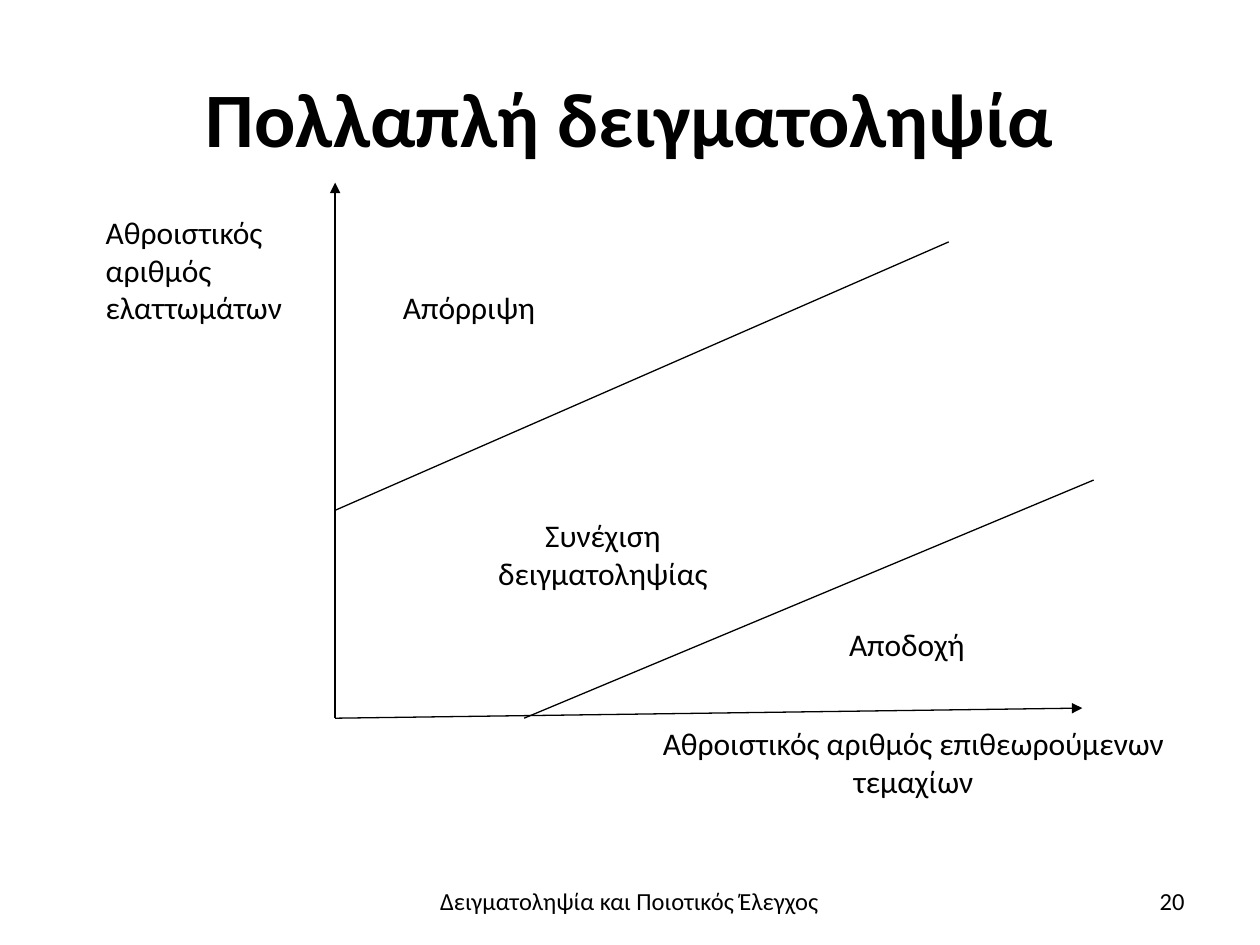
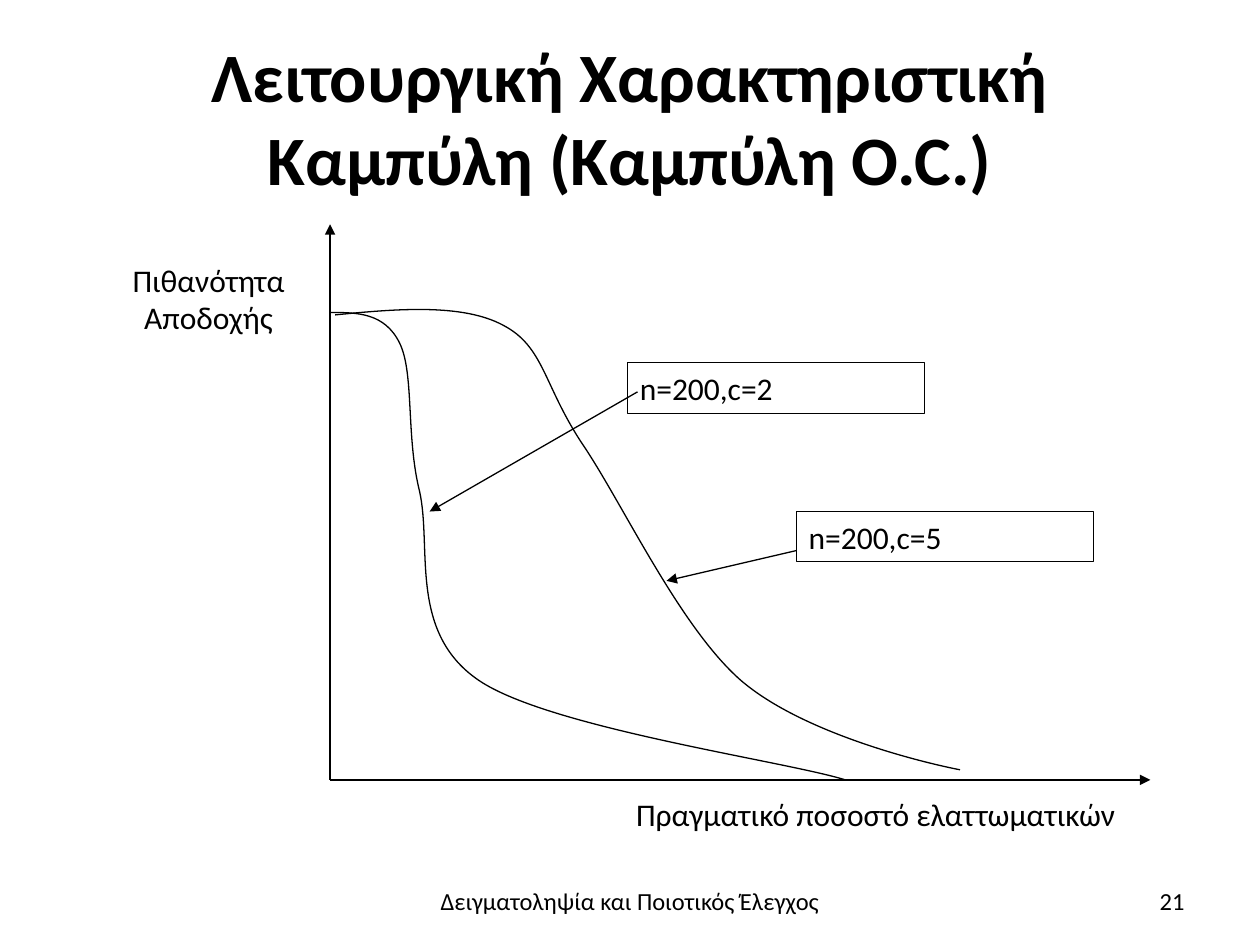
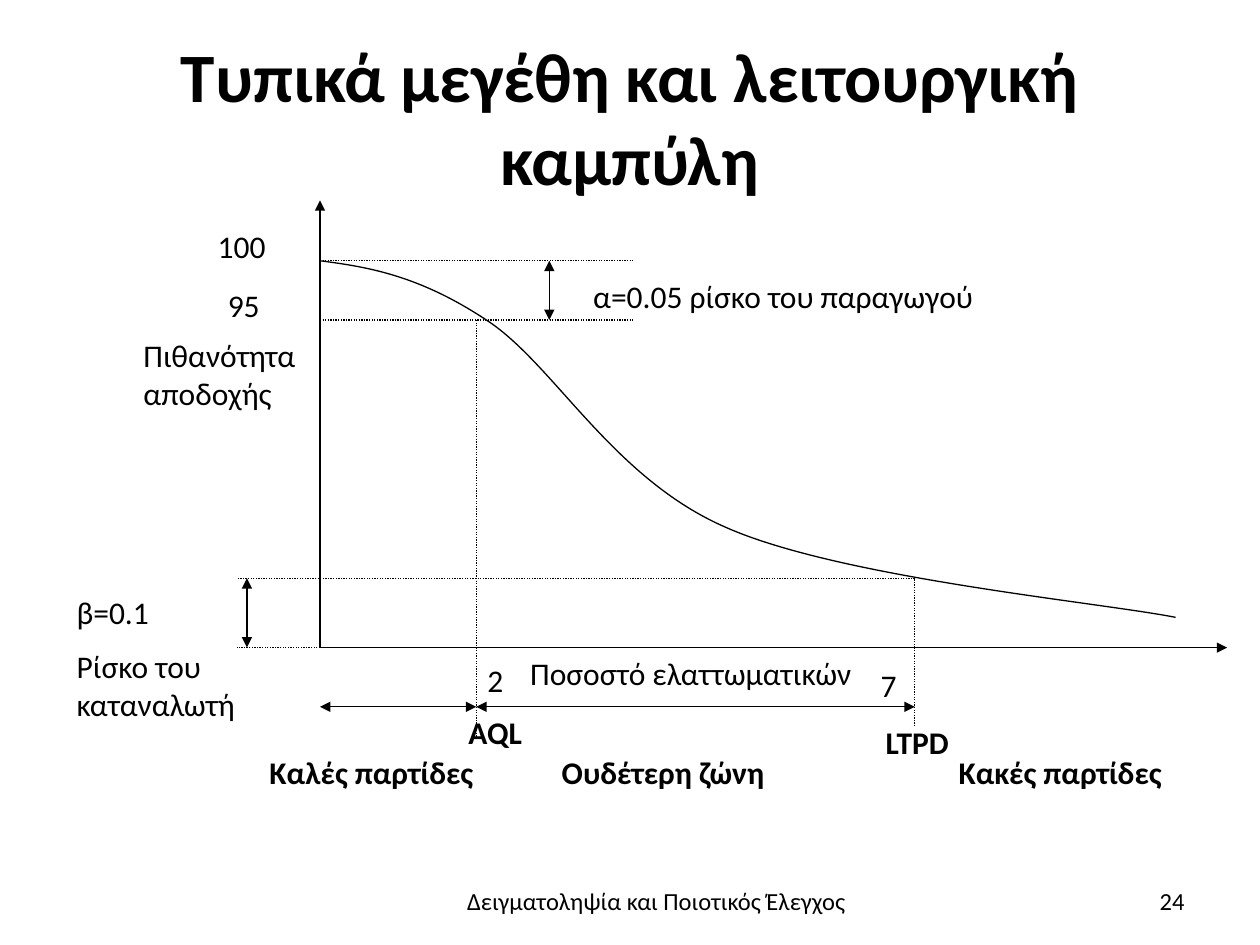
from lxml import etree
from pptx import Presentation
from pptx import util as u
from pptx.dml import color
from pptx.enum import dml, shapes, text
from pptx.oxml import ns

W, H = 10, 7.5
FONT, INK, PAPER = "Calibri", "000000", "FFFFFF"
LINE_W = 0.75
BODY, SMALL = 18, 14
LINE_H, PAD, PARA_GAP = 0.3, 0.1, 9
LEFT, CENTER, RIGHT = text.PP_ALIGN.LEFT, text.PP_ALIGN.CENTER, text.PP_ALIGN.RIGHT
FOOTER = "Δειγματοληψία και Ποιοτικός Έλεγχος"
FOOT_Y, FOOT_H = 6.95, 0.4
NUMBER_X, NUMBER_W = 7.17, 2.33

SAMPLING_ORIGIN = (2.66, 5.7)
OC_ORIGIN = (2.62, 6.19)
AXIS_X, AQL_X, LTPD_X, END_X = 2.54, 3.78, 7.26, 5.02
ALL_Y, HIGH_Y, LOW_Y, BASE_Y, ZONE_Y = 2.07, 2.54, 4.59, 5.14, 5.61
ALPHA_X, BETA_X, BETA_LEFT = 4.36, 1.96, 1.88
ZONE_LABEL_Y, ZONE_LABEL_W = 5.93, 1.99

SLIDES = [
    dict(
        title="Πολλαπλή δειγματοληψία", size=44, number="20", footer=(2.67, 4.65),
        border=PAPER,
        arrows=[(SAMPLING_ORIGIN, (2.66, 1.45)), (SAMPLING_ORIGIN, (8.59, 5.62))],
        plain=[((2.66, 4.05), (7.53, 1.92)), ((4.16, 5.7), (8.68, 3.81))],
        labels=[
            (["Αθροιστικός αριθμός ελαττωμάτων"], 0.74, 1.64, 1.82, 3, {}),
            (["Αθροιστικός αριθμός επιθεωρούμενων τεμαχίων"], 5.1, 5.7, 4.3, 2, dict(align=CENTER)),
            (["Απόρριψη"], 3.1, 2.24, 2.74, 1, {}),
            (["Αποδοχή"], 6.64, 4.91, 2.04, 1, {}),
            (["Συνέχιση δειγματοληψίας"], 3.37, 4.05, 2.83, 2, dict(align=CENTER)),
        ],
    ),
    dict(
        title="Λειτουργική Χαρακτηριστική Καμπύλη (Καμπύλη O.C.)", size=39.6,
        number="21", footer=(2.56, 4.88), border=PAPER,
        arrows=[(OC_ORIGIN, (2.62, 1.78)), (OC_ORIGIN, (9.13, 6.19)),
                ((5.06, 3.11), (3.41, 4.06)), ((6.32, 4.37), (5.29, 4.61))],
        curves=[
            [(2.62, 2.48), (2.83, 2.48), (3.05, 2.48), (3.17, 2.72), (3.29, 2.96),
             (3.22, 3.46), (3.33, 3.9), (3.43, 4.35), (3.24, 5.02), (3.8, 5.4),
             (4.36, 5.78), (6.23, 6.04), (6.71, 6.19)],
            [(2.66, 2.5), (3.16, 2.45), (3.67, 2.41), (3.99, 2.58), (4.32, 2.75),
             (4.31, 3.05), (4.62, 3.52), (4.94, 3.99), (5.39, 4.97), (5.88, 5.4),
             (6.38, 5.83), (7.36, 6.06), (7.62, 6.11)],
        ],
        labels=[
            (["n=200,c=2"], 4.98, 2.88, 2.36, 1, dict(border=INK)),
            (["n=200,c=5"], 6.32, 4.06, 2.36, 1, dict(border=INK)),
            (["Πραγματικό ποσοστό ελαττωματικών"], 4.95, 6.26, 4.17, 1, {}),
            (["Πιθανότητα Αποδοχής"], 0.85, 2.02, 1.61, 2, dict(align=CENTER)),
        ],
    ),
    dict(
        title="Τυπικά μεγέθη και λειτουργική καμπύλη", size=39.6,
        number="24", footer=(3.16, 4.1), border=None,
        arrows=[((AXIS_X, BASE_Y), (AXIS_X, 1.59)), ((AXIS_X, BASE_Y), (9.74, BASE_Y))],
        spans=[((ALPHA_X, ALL_Y), (ALPHA_X, HIGH_Y)), ((BETA_X, LOW_Y), (BETA_X, BASE_Y)),
               ((AXIS_X, ZONE_Y), (AQL_X, ZONE_Y)), ((AQL_X, ZONE_Y), (LTPD_X, ZONE_Y))],
        dotted=[((AXIS_X, ALL_Y), (END_X, ALL_Y)), ((AXIS_X, HIGH_Y), (END_X, HIGH_Y)),
                ((LTPD_X, LOW_Y), (BETA_LEFT, LOW_Y)), ((AXIS_X, BASE_Y), (BETA_LEFT, BASE_Y)),
                ((AQL_X, HIGH_Y), (AQL_X, BASE_Y)), ((AQL_X, BASE_Y), (AQL_X, 5.85)),
                ((LTPD_X, BASE_Y), (LTPD_X, LOW_Y)), ((LTPD_X, BASE_Y), (LTPD_X, 5.77))],
        curves=[[(AXIS_X, ALL_Y), (2.93, 2.12), (3.33, 2.19), (3.86, 2.54), (4.4, 2.89),
                 (4.86, 3.8), (5.77, 4.19), (6.68, 4.59), (8.72, 4.78), (9.33, 4.9)]],
        labels=[
            (["AQL"], 3.62, 5.61, 0.83, 1, dict(bold=True)),
            (["LTPD"], 6.93, 5.69, 0.99, 1, dict(bold=True)),
            (["2"], 3.77, 5.2, 0.33, 1, {}),
            (["Ποσοστό ελαττωματικών"], 4.11, 5.14, 3.15, 1, {}),
            (["100"], 1.63, 1.75, 0.74, 1, {}),
            (["95"], 1.71, 2.22, 0.5, 1, {}),
            (["α=0.05 ρίσκο του παραγωγού"], 4.61, 2.15, 3.97, 1, {}),
            (["β=0.1", "Ρίσκο του καταναλωτή"], 0.51, 4.66, 1.61, 3, {}),
            (["Καλές παρτίδες"], 2.04, ZONE_LABEL_Y, ZONE_LABEL_W, 1, dict(bold=True)),
            (["Κακές παρτίδες"], 7.51, ZONE_LABEL_Y, ZONE_LABEL_W, 1, dict(bold=True)),
            (["Ουδέτερη ζώνη"], 4.36, ZONE_LABEL_Y, ZONE_LABEL_W, 1, dict(bold=True)),
            (["Πιθανότητα αποδοχής"], 1.04, 2.62, 1.55, 2, {}),
            (["7"], 6.89, 5.24, 0.33, 1, {}),
        ],
    ),
]

LINE_STYLES = dict(
    dotted=dict(dash=dml.MSO_LINE.ROUND_DOT),
    arrows=dict(ends=["tailEnd"]),
    plain=dict(),
    spans=dict(ends=["headEnd", "tailEnd"]),
)


def rgb(value):
    return color.RGBColor.from_string(value)


def inches(*values):
    return [u.Inches(v) for v in values]


def format_line(line, ink=INK):
    line.color.rgb = rgb(ink)
    line.width = u.Pt(LINE_W)


def format_outline(sp, ink=INK):
    sp.shadow.inherit = False
    sp.fill.background()
    format_line(sp.line, ink)


def format_paragraph(p, size, align, bold=False):
    p.alignment = align
    p.font.name, p.font.size, p.font.bold = FONT, u.Pt(size), bold
    p.font.color.rgb = rgb(INK)


def add_title(s, words, size):
    sp = s.shapes.title
    sp.left, sp.top, sp.width, sp.height = inches(0.05 * W, 0.04 * H, 0.9 * W, 1.25)
    tf = sp.text_frame
    tf.text = words
    tf.auto_size = text.MSO_AUTO_SIZE.NONE
    tf.vertical_anchor = text.MSO_ANCHOR.MIDDLE
    format_paragraph(tf.paragraphs[0], size, CENTER, True)


def add_text(s, paragraphs, box, size=BODY, align=LEFT, bold=False, border=None,
             anchor=text.MSO_ANCHOR.TOP):
    if border:
        sp = s.shapes.add_shape(shapes.MSO_SHAPE.RECTANGLE, *inches(*box))
        format_outline(sp, border)
    else:
        sp = s.shapes.add_textbox(*inches(*box))
    tf = sp.text_frame
    tf.word_wrap = True
    tf.vertical_anchor = anchor
    for i, words in enumerate(paragraphs):
        p = tf.add_paragraph() if i else tf.paragraphs[0]
        p.text = words
        format_paragraph(p, size, align, bold)
        if i:
            p.space_before = u.Pt(PARA_GAP)
    return tf


def add_label(s, paragraphs, x, y, w, rows, style):
    h = PAD + rows * LINE_H + (len(paragraphs) - 1) * PARA_GAP / 72
    tf = add_text(s, paragraphs, (x, y, w, h), **style)
    tf.auto_size = text.MSO_AUTO_SIZE.SHAPE_TO_FIT_TEXT


def add_line(s, start, end, ends=(), dash=None):
    c = s.shapes.add_connector(shapes.MSO_CONNECTOR.STRAIGHT, *inches(*start, *end))
    format_line(c.line)
    if dash:
        c.line.dash_style = dash
    ln = c.line._get_or_add_ln()
    for tag in ends:
        etree.SubElement(ln, ns.qn("a:" + tag), type="triangle")
    etree.SubElement(c._element.spPr, ns.qn("a:effectLst"))


def add_curve(s, points):
    builder = s.shapes.build_freeform(*inches(*points[0]))
    builder.add_line_segments([inches(*point) for point in points[1:]], close=False)
    sp = builder.convert_to_shape()
    segments = list(sp._element.iter(ns.qn("a:lnTo")))
    for i in range(0, len(segments), 3):
        first, *others = segments[i:i + 3]
        first.tag = ns.qn("a:cubicBezTo")
        for segment in others:
            first.append(segment[0])
            segment.getparent().remove(segment)
    format_outline(sp)


def add_footer(s, number, x, w):
    middle = text.MSO_ANCHOR.MIDDLE
    add_text(s, [FOOTER], (x, FOOT_Y, w, FOOT_H), SMALL, CENTER, anchor=middle)
    add_text(s, [number], (NUMBER_X, FOOT_Y, NUMBER_W, FOOT_H), SMALL, RIGHT, anchor=middle)


def main():
    prs = Presentation()
    prs.slide_width, prs.slide_height = inches(W, H)
    for content in SLIDES:
        s = prs.slides.add_slide(prs.slide_layouts[5])
        s.background.fill.solid()
        s.background.fill.fore_color.rgb = rgb(PAPER)
        add_title(s, content["title"], content["size"])
        for kind, style in LINE_STYLES.items():
            for start, end in content.get(kind, []):
                add_line(s, start, end, **style)
        for points in content.get("curves", []):
            add_curve(s, points)
        for *place, style in content["labels"]:
            add_label(s, *place, {"border": content["border"], **style})
        add_footer(s, content["number"], *content["footer"])
    prs.save("out.pptx")


if __name__ == "__main__":
    main()
